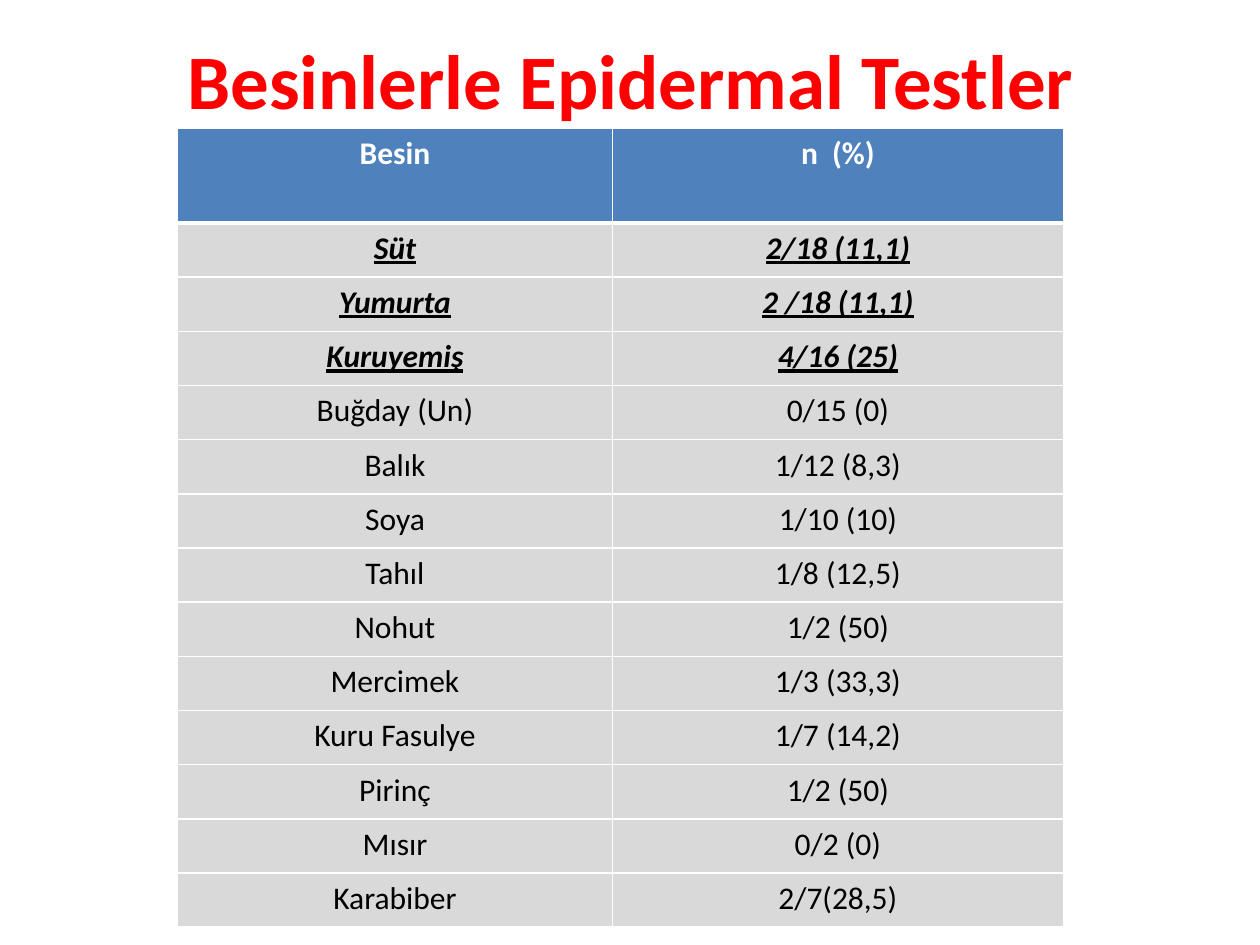
"""Build a slide with a table of epidermal test results by food."""
from dataclasses import dataclass

from lxml.etree import SubElement
from pptx import Presentation
from pptx.dml.color import RGBColor as RGB
from pptx.enum.text import MSO_ANCHOR as Anchor, PP_ALIGN as Align
from pptx.oxml.ns import qn
from pptx.util import Inches, Pt


@dataclass(frozen=True)
class Theme:
    """Colours, font and type sizes of the slide."""
    font: str = "Calibri"
    title: str = "FF0000"
    header: str = "4F81BD"
    body: str = "D9D9D9"
    ink: str = "000000"
    white: str = "FFFFFF"
    title_size: int = 44
    cell_size: int = 18
    rule: int = 1
    header_rule: int = 3


THEME = Theme()
HEADER = ("Besin", "n  (%)")
KEY_FOODS = [
    ("Süt", "2/18 (11,1)"),
    ("Yumurta", "2 /18 (11,1)"),
    ("Kuruyemiş", "4/16 (25)"),
]
OTHER_FOODS = [
    ("Buğday (Un)", "0/15 (0)"),
    ("Balık", "1/12 (8,3)"),
    ("Soya", "1/10 (10)"),
    ("Tahıl", "1/8 (12,5)"),
    ("Nohut", "1/2 (50)"),
    ("Mercimek", "1/3 (33,3)"),
    ("Kuru Fasulye", "1/7 (14,2)"),
    ("Pirinç", "1/2 (50)"),
    ("Mısır", "0/2 (0)"),
    ("Karabiber", "2/7(28,5)"),
]
COL_WIDTHS = (3.45, 3.58)
HEADER_HEIGHT, ROW_HEIGHT = 0.75, 0.43


def write_text(tf, text, size, color, **formats):
    """Write one centred run with the given font formats."""
    p = tf.paragraphs[0]
    p.alignment = Align.CENTER
    r = p.add_run()
    r.text = text
    r.font.color.rgb = RGB.from_string(color)
    for name, value in {"name": THEME.font, "size": Pt(size), **formats}.items():
        setattr(r.font, name, value)


def add_title(s, text):
    """Add the slide title."""
    tf = s.shapes.add_textbox(Inches(0.51), 0, Inches(9), Inches(1.25)).text_frame
    tf.word_wrap = True
    tf.vertical_anchor = Anchor.MIDDLE
    write_text(tf, text, THEME.title_size, THEME.title, bold=True)


def set_borders(cell, widths):
    """Draw white cell borders, given as points by side."""
    tc_pr = cell._tc.get_or_add_tcPr()
    for side, width in widths.items():
        ln = SubElement(tc_pr, qn(f"a:ln{side}"), w=str(Pt(width)))
        fill = SubElement(ln, qn("a:solidFill"))
        SubElement(fill, qn("a:srgbClr"), val=THEME.white)


def fill_row(row, texts, fill, color, widths, **formats):
    """Fill and format the cells of one table row."""
    for cell, text in zip(row.cells, texts):
        set_borders(cell, widths)
        cell.fill.solid()
        cell.fill.fore_color.rgb = RGB.from_string(fill)
        write_text(cell.text_frame, text, THEME.cell_size, color, **formats)


def add_results(s):
    """Add the results table with its header, key foods and other foods."""
    foods = KEY_FOODS + OTHER_FOODS
    height = HEADER_HEIGHT + ROW_HEIGHT * len(foods)
    table = s.shapes.add_table(
        len(foods) + 1, len(COL_WIDTHS), Inches(1.41), Inches(1.02),
        Inches(sum(COL_WIDTHS)), Inches(height)).table
    table.horz_banding = False
    for col, width in zip(table.columns, COL_WIDTHS):
        col.width = Inches(width)

    rules = dict.fromkeys("LRTB", THEME.rule)
    header, *rows = table.rows
    header.height = Inches(HEADER_HEIGHT)
    fill_row(header, HEADER, THEME.header, THEME.white,
             {**rules, "B": THEME.header_rule}, bold=True)
    for i, (row, texts) in enumerate(zip(rows, foods)):
        row.height = Inches(ROW_HEIGHT)
        key = i < len(KEY_FOODS)
        top = THEME.rule if i else THEME.header_rule
        fill_row(row, texts, THEME.body, THEME.ink, {**rules, "T": top},
                 bold=key, italic=key, underline=key)


def main():
    """Build and save the presentation."""
    prs = Presentation()
    prs.slide_width, prs.slide_height = Inches(10), Inches(7.5)
    s = prs.slides.add_slide(prs.slide_layouts[6])
    add_title(s, "Besinlerle Epidermal Testler")
    add_results(s)
    prs.save("out.pptx")


if __name__ == "__main__":
    main()
